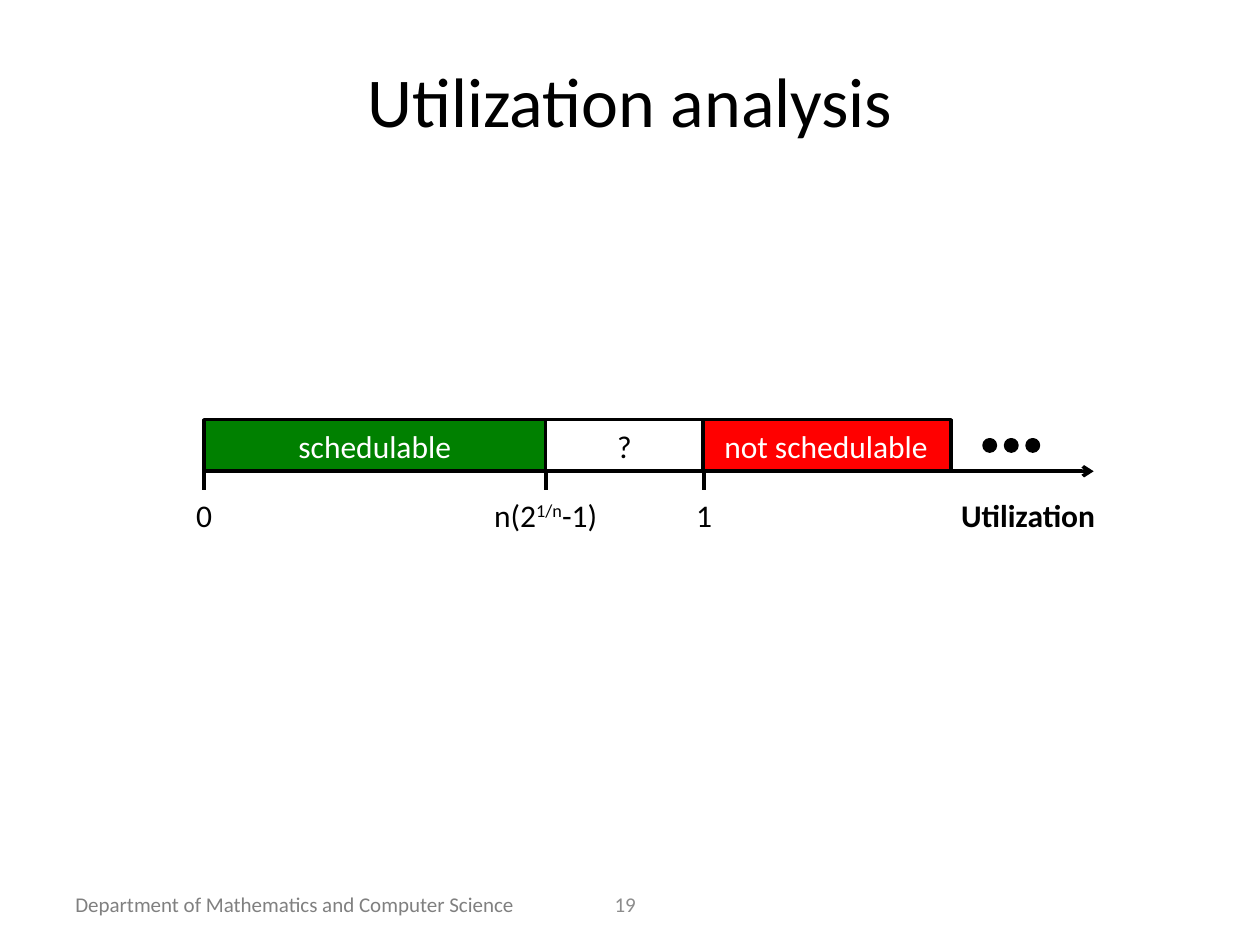
import pptx
import pptx.util
import pptx.dml.color
import pptx.enum.shapes
import pptx.enum.text
import lxml.etree
from pptx.oxml.ns import qn

Pt = pptx.util.Pt
RGBColor = pptx.dml.color.RGBColor
ALIGN = pptx.enum.text.PP_ALIGN
ANCHOR = pptx.enum.text.MSO_ANCHOR
SHAPE = pptx.enum.shapes.MSO_SHAPE

BLACK = RGBColor(0x00, 0x00, 0x00)
WHITE = RGBColor(0xFF, 0xFF, 0xFF)
GREEN = RGBColor(0x00, 0x80, 0x00)
RED = RGBColor(0xFF, 0x00, 0x00)
FOOTER_GRAY = RGBColor(0x80, 0x80, 0x80)
NUMBER_GRAY = RGBColor(0x8C, 0x8C, 0x8C)
FONT = "Calibri"

TITLE = "Utilization analysis"
FOOTER = "Department of Mathematics and Computer Science"
SLIDE_NUMBER = "19"
AXIS_NAME = "Utilization"
ZONES = [
    ("schedulable", 116.6, 311.8, GREEN, WHITE),
    ("not schedulable", 400.5, 543.6, RED, WHITE),
    ("?", 311.8, 401.8, WHITE, BLACK),
]
TICKS = [
    (116.6, 24, [("0", False)]),
    (311.8, 76.4, [("n(2", False), ("1/n", True), ("-1)", False)]),
    (402.3, 24, [("1", False)]),
]

BAR_TOP, BAR_HEIGHT = 239.8, 29.5
AXIS_Y = BAR_TOP + BAR_HEIGHT
AXIS_END = 625
TICK_LENGTH = 10.5
LABEL_TOP, LABEL_HEIGHT = 279.8, 29
AXIS_NAME_LEFT, AXIS_NAME_WIDTH = 541.4, 92.2
DOT_LEFT, DOT_TOP, DOT_SIZE, DOT_STEP, DOT_COUNT = 562.3, 251.3, 6.5, 12.3, 3


def format_runs(paragraph, size, color, bold=False):
    for run in paragraph.runs:
        run.font.name = FONT
        run.font.size = Pt(size)
        run.font.color.rgb = color
        run.font.bold = bold


def add_text(slide, box, parts, size, color, align=ALIGN.CENTER,
             anchor=ANCHOR.TOP, wrap=False, bold=False):
    shape = slide.shapes.add_textbox(*map(Pt, box))
    frame = shape.text_frame
    frame.word_wrap = wrap
    frame.vertical_anchor = anchor
    paragraph = frame.paragraphs[0]
    paragraph.alignment = align
    for text, raised in parts:
        run = paragraph.add_run()
        run.text = text
        if raised:
            run._r.get_or_add_rPr().set("baseline", "30000")
    format_runs(paragraph, size, color, bold)


def add_shape(slide, kind, box, fill):
    shape = slide.shapes.add_shape(kind, *map(Pt, box))
    shape.shadow.inherit = False
    shape.fill.solid()
    shape.fill.fore_color.rgb = fill
    shape.line.color.rgb = BLACK
    shape.line.width = Pt(2)
    return shape


def add_line(slide, start, end, width, arrow=False):
    line = slide.shapes.add_connector(
        pptx.enum.shapes.MSO_CONNECTOR.STRAIGHT, *map(Pt, start + end))
    line.line.color.rgb = BLACK
    line.line.width = Pt(width)
    properties = line._element.spPr
    if arrow:
        outline = properties.find(qn("a:ln"))
        lxml.etree.SubElement(outline, qn("a:tailEnd")).set("type", "arrow")
    lxml.etree.SubElement(properties, qn("a:effectLst"))


def add_zone(slide, label, left, right, fill, text_color):
    shape = add_shape(slide, SHAPE.RECTANGLE,
                      (left, BAR_TOP, right - left, BAR_HEIGHT), fill)
    frame = shape.text_frame
    frame.text = label
    frame.word_wrap = False
    frame.vertical_anchor = ANCHOR.MIDDLE
    frame.paragraphs[0].alignment = ALIGN.CENTER
    format_runs(frame.paragraphs[0], 18, text_color)


def main():
    presentation = pptx.Presentation()
    presentation.slide_width, presentation.slide_height = Pt(720), Pt(540)
    slide = presentation.slides.add_slide(presentation.slide_layouts[6])

    add_text(slide, (36, 506, 282, 21.6), [(FOOTER, False)], 12, FOOTER_GRAY,
             align=ALIGN.LEFT)
    add_text(slide, (36, 21.6, 648, 70.6), [(TITLE, False)], 40, BLACK,
             anchor=ANCHOR.MIDDLE, wrap=True)
    add_text(slide, (318, 506, 78.5, 21.6), [(SLIDE_NUMBER, False)], 12,
             NUMBER_GRAY, anchor=ANCHOR.MIDDLE, wrap=True)

    for zone in ZONES:
        add_zone(slide, *zone)
    for index in range(DOT_COUNT):
        left = DOT_LEFT + index * DOT_STEP
        add_shape(slide, SHAPE.OVAL, (left, DOT_TOP, DOT_SIZE, DOT_SIZE), BLACK)

    for x, width, parts in TICKS:
        add_line(slide, (x, AXIS_Y), (x, AXIS_Y + TICK_LENGTH), 2.25)
        add_text(slide, (x - width / 2, LABEL_TOP, width, LABEL_HEIGHT),
                 parts, 18, BLACK)
    add_line(slide, (ZONES[1][2], AXIS_Y), (AXIS_END, AXIS_Y), 2, arrow=True)
    add_text(slide, (AXIS_NAME_LEFT, LABEL_TOP, AXIS_NAME_WIDTH, LABEL_HEIGHT),
             [(AXIS_NAME, False)], 18, BLACK, bold=True)

    presentation.save("out.pptx")


if __name__ == "__main__":
    main()
